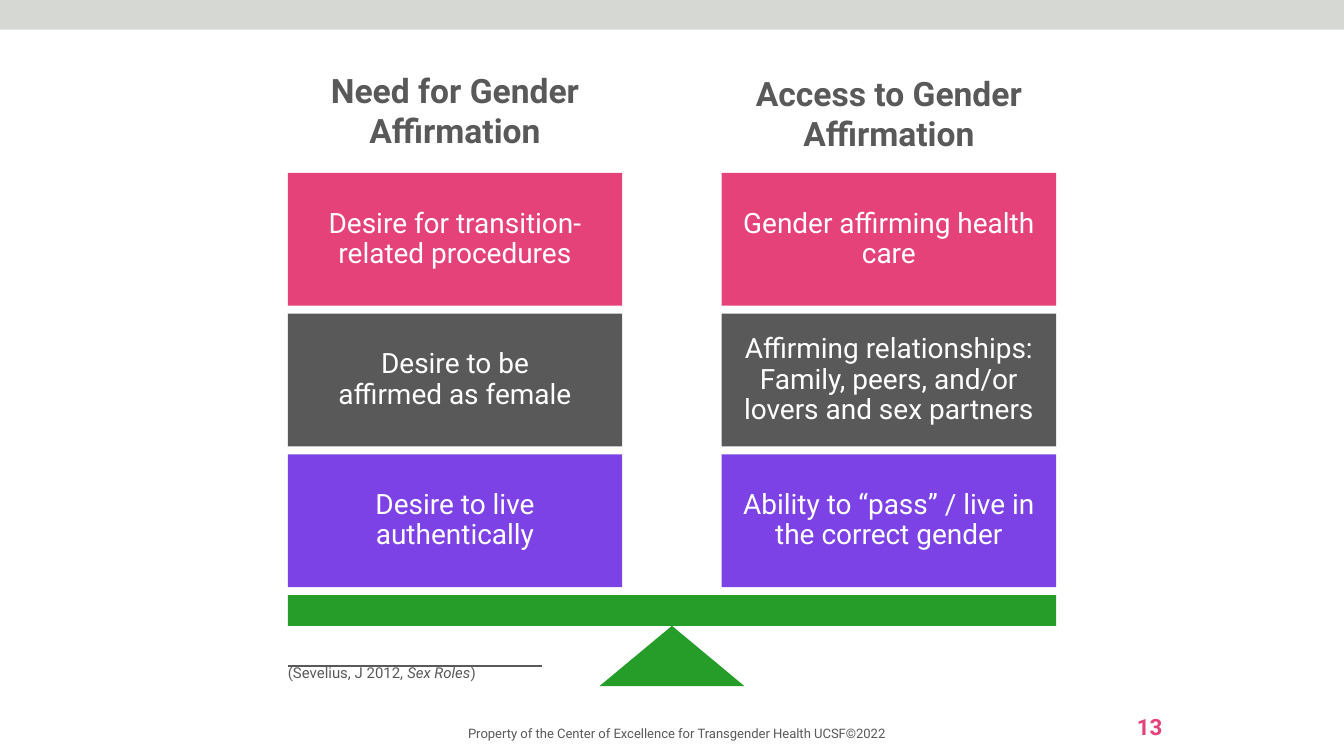
from dataclasses import dataclass

from lxml import etree
from pptx import Presentation
from pptx.dml.color import RGBColor
from pptx.enum.shapes import MSO_CONNECTOR, MSO_SHAPE
from pptx.enum.text import MSO_ANCHOR, PP_ALIGN
from pptx.oxml.ns import qn
from pptx.util import Cm, Pt

RECTANGLE = MSO_SHAPE.RECTANGLE
TRIANGLE = MSO_SHAPE.ISOSCELES_TRIANGLE
STRAIGHT = MSO_CONNECTOR.STRAIGHT
LEFT, CENTER, RIGHT = PP_ALIGN.LEFT, PP_ALIGN.CENTER, PP_ALIGN.RIGHT
TOP, MIDDLE = MSO_ANCHOR.TOP, MSO_ANCHOR.MIDDLE


@dataclass(frozen=True)
class Theme:
    font: str = "Roboto"
    pink: str = "E6427A"
    gray: str = "595959"
    purple: str = "7D42E6"
    green: str = "279D29"
    band: str = "D6D8D3"
    white: str = "FFFFFF"
    heading: float = 18
    block: float = 15
    number: float = 12
    citation: float = 8
    footer: float = 7


@dataclass(frozen=True)
class Area:
    left: float
    top: float
    width: float
    height: float

    def lengths(self) -> tuple:
        return Cm(self.left), Cm(self.top), Cm(self.width), Cm(self.height)


@dataclass(frozen=True)
class Column:
    left: float
    heading_top: float
    heading: str
    blocks: tuple[str, ...]


THEME = Theme()
BLOCK_COLORS = (THEME.pink, THEME.gray, THEME.purple)
BLOCK_WIDTH, BLOCK_HEIGHT = 6.32, 2.51
BLOCK_TOP, BLOCK_PITCH = 3.27, 2.66
BEAM = Area(5.44, 11.25, 14.52, 0.58)
PIVOT_WIDTH, PIVOT_HEIGHT = 2.74, 1.14

COLUMNS = (
    Column(
        BEAM.left,
        1.07,
        "Need for Gender Affirmation",
        (
            "Desire for transition-related procedures",
            "Desire to be\naffirmed as female",
            "Desire to live authentically",
        ),
    ),
    Column(
        BEAM.left + BEAM.width - BLOCK_WIDTH,
        1.12,
        "Access to Gender Affirmation",
        (
            "Gender affirming health care",
            "Affirming relationships: Family, peers, and/or lovers and sex partners",
            "Ability to “pass” / live in the correct gender",
        ),
    ),
)


def write(box, text: str, *, size: float, color: str, bold: bool = False,
          italic_part: str = "", align=CENTER, anchor=TOP, spacing: float = 1.0,
          insets: tuple = (0.25, 0.25, 0.25, 0.25)) -> None:
    frame = box.text_frame
    frame.word_wrap = True
    frame.vertical_anchor = anchor
    frame.margin_left, frame.margin_top, frame.margin_right, frame.margin_bottom = map(Cm, insets)
    para = frame.paragraphs[0]
    para.alignment = align
    para.line_spacing = spacing
    before, part, after = text.partition(italic_part) if italic_part else (text, "", "")
    for piece, italic in ((before, False), (part, True), (after, False)):
        if not piece:
            continue
        for index, line in enumerate(piece.split("\n")):
            if index:
                para.add_line_break()
            span = para.add_run()
            span.text = line
            span.font.name = THEME.font
            span.font.size = Pt(size)
            span.font.bold = bold
            span.font.italic = italic
            span.font.color.rgb = RGBColor.from_string(color)


def add_label(page, area: Area, text: str, **style) -> None:
    write(page.shapes.add_textbox(*area.lengths()), text, **style)


def add_block(page, kind, area: Area, color: str):
    shape = page.shapes.add_shape(kind, *area.lengths())
    shape.shadow.inherit = False
    shape.fill.solid()
    shape.fill.fore_color.rgb = RGBColor.from_string(color)
    shape.line.fill.background()
    return shape


def add_rule(page, left: float, top: float, width: float) -> None:
    rule = page.shapes.add_connector(STRAIGHT, Cm(left), Cm(top), Cm(left + width), Cm(top))
    rule.line.color.rgb = RGBColor.from_string(THEME.gray)
    rule.line.width = Pt(0.75)
    etree.SubElement(rule._element.spPr, qn("a:effectLst"))


def add_column(page, column: Column) -> None:
    add_label(page, Area(column.left, column.heading_top, BLOCK_WIDTH, 2.06),
              column.heading, size=THEME.heading, color=THEME.gray, bold=True)
    for row, (text, color) in enumerate(zip(column.blocks, BLOCK_COLORS)):
        area = Area(column.left, BLOCK_TOP + row * BLOCK_PITCH, BLOCK_WIDTH, BLOCK_HEIGHT)
        write(add_block(page, RECTANGLE, area, color), text, size=THEME.block,
              color=THEME.white, anchor=MIDDLE, spacing=0.9,
              insets=(0.18, 0.18, 0.18, 0.18))


def add_balance(page) -> None:
    add_block(page, RECTANGLE, BEAM, THEME.green)
    pivot_left = BEAM.left + (BEAM.width - PIVOT_WIDTH) / 2
    pivot = Area(pivot_left, BEAM.top + BEAM.height, PIVOT_WIDTH, PIVOT_HEIGHT)
    add_block(page, TRIANGLE, pivot, THEME.green)


def main() -> None:
    deck = Presentation()
    deck.slide_width, deck.slide_height = Cm(25.4), Cm(14.29)
    page = deck.slides.add_slide(deck.slide_layouts[6])
    add_label(page, Area(7.9, 13.59, 9.78, 0.56),
              "Property of the Center of Excellence for Transgender Health UCSF©2022",
              size=THEME.footer, color=THEME.gray, insets=(0.25, 0.13, 0.25, 0.13))
    add_block(page, RECTANGLE, Area(0, -0.05, 25.4, 0.61), THEME.band)
    add_label(page, Area(21.13, 13.36, 1.09, 0.76), "13", size=THEME.number,
              color=THEME.pink, bold=True, align=RIGHT, anchor=MIDDLE,
              insets=(0.25, 0.13, 0.25, 0.13))
    add_label(page, Area(BEAM.left, 12.37, 9.09, 0.86), "(Sevelius, J 2012, Sex Roles)",
              size=THEME.citation, color=THEME.gray, italic_part="Sex Roles",
              align=LEFT, insets=(0, 0.25, 0.25, 0.25))
    add_rule(page, BEAM.left, 12.59, 4.8)
    for column in COLUMNS:
        add_column(page, column)
    add_balance(page)
    deck.save("out.pptx")


if __name__ == "__main__":
    main()
